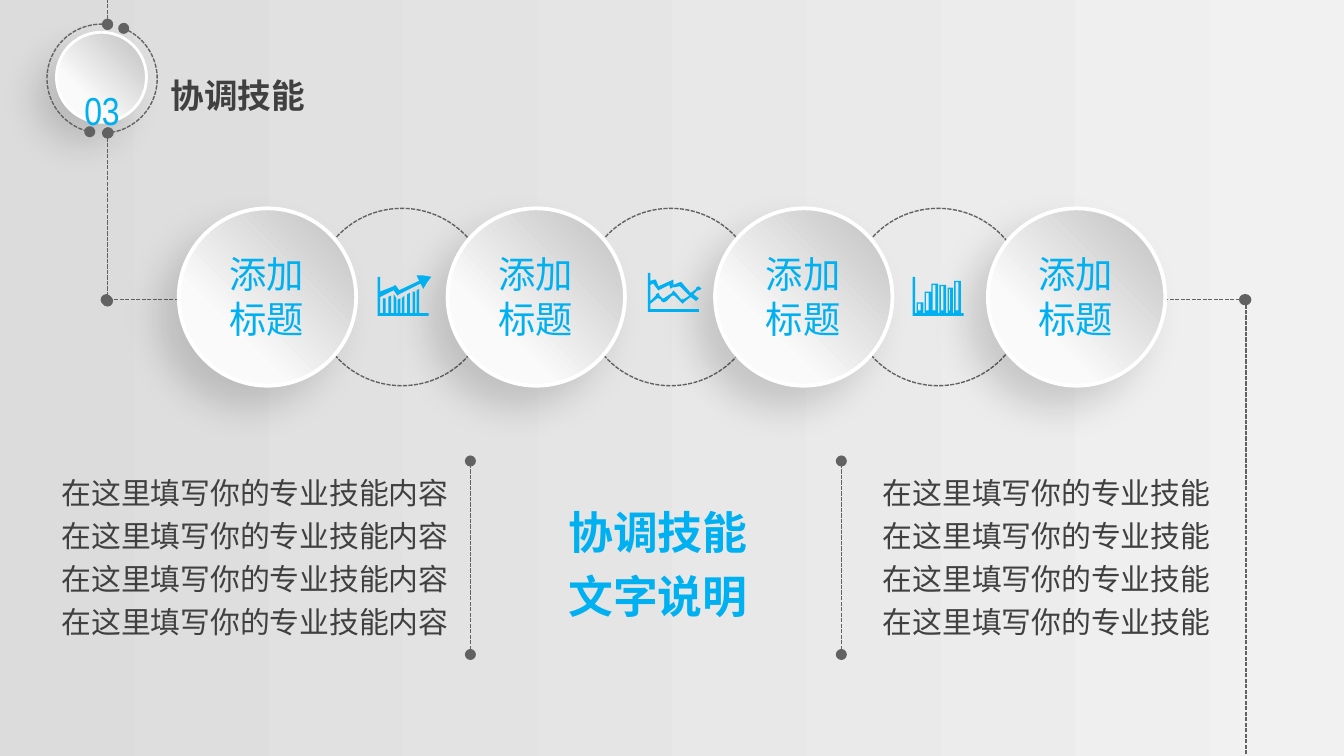
from pptx import Presentation
from pptx.dml.color import RGBColor
from pptx.enum.dml import MSO_LINE
from pptx.enum.shapes import MSO_CONNECTOR, MSO_SHAPE
from pptx.enum.text import MSO_ANCHOR, MSO_AUTO_SIZE, PP_ALIGN
from pptx.oxml import parse_xml
from pptx.oxml.ns import nsdecls, qn
from pptx.util import Inches, Pt
from lxml.etree import SubElement

BLUE, GREY, DARK, WHITE = "00B0F0", "626262", "404040", "FFFFFF"
SC, JP = "Noto Sans CJK SC", "Noto Sans CJK JP"

# Icon outlines, in hundredths of an inch from the icon's corner
GROWTH_GAPS = [(4, 17, 6, 17), (8, 16, 10, 15), (15, 18, 17, 17), (18, 17, 20, 15),
               (22, 14, 24, 13), (26, 12, 28, 12), (29, 11, 31, 10)]
GROWTH_ARROW = [(38, 28), (38, 30), (0, 30), (0, 1), (2, 1), (2, 12), (12, 8), (13, 7),
                (14, 8), (16, 11), (31, 4), (29, 0), (34, 0), (40, 1), (37, 5), (34, 10),
                (32, 6), (16, 14), (15, 15), (14, 14), (12, 11), (2, 16)]
TREND_OUTER = [(2, 27), (38, 27), (38, 29), (0, 29), (0, 0), (2, 0), (2, 6), (5, 5),
               (6, 5), (8, 10), (17, 6), (19, 5), (19, 9), (24, 7), (25, 7), (32, 15),
               (36, 12), (36, 11), (38, 10), (40, 12), (38, 13), (37, 13), (34, 16),
               (38, 19), (36, 21), (32, 18), (28, 21), (26, 23), (24, 21), (20, 17),
               (18, 17), (14, 21), (12, 22), (10, 21), (10, 20), (8, 19), (7, 19), (2, 23)]
TREND_INNER = [(26, 19), (26, 20), (31, 17), (24, 10), (18, 11), (17, 12), (16, 9),
               (8, 13), (7, 12), (4, 8), (2, 9), (2, 21), (6, 17), (6, 16), (8, 15),
               (9, 17), (11, 19), (12, 19), (18, 15), (19, 13), (21, 15), (25, 20)]
BARS = [(3, 8, 19), (9, 14, 11), (14, 19, 5), (20, 25, 6), (26, 30, 8), (31, 36, 3)]


def rgb(value):
    return RGBColor.from_string(value)


def set_gradient(fill, angle, *stops):
    fill.gradient()
    fill.gradient_angle = angle
    for stop, (position, color) in zip(fill.gradient_stops, stops):
        stop.position = position
        stop.color.rgb = rgb(color)


def dash(line):
    """Give a line the thin dashed style with a dot at each end."""
    line.color.rgb = rgb(GREY)
    line.width = Pt(0.75)
    line.dash_style = MSO_LINE.SQUARE_DOT
    for end in ("headEnd", "tailEnd"):
        SubElement(line._get_or_add_ln(), qn(f"a:{end}"), type="oval")


def add_dotted_line(shapes, x1, y1, x2, y2):
    connector = shapes.add_connector(MSO_CONNECTOR.STRAIGHT, *map(Inches, (x1, y1, x2, y2)))
    dash(connector.line)
    SubElement(connector._element.spPr, qn("a:effectLst"))


def add_dashed_shape(shapes, kind, x, y, size):
    outline = shapes.add_shape(kind, *map(Inches, (x, y, size, size)))
    outline.shadow.inherit = False
    outline.fill.background()
    dash(outline.line)
    return outline


def add_disc(shapes, x, y, size, border):
    """Add a shaded white-rimmed circle with a soft shadow."""
    disc = shapes.add_shape(MSO_SHAPE.OVAL, *map(Inches, (x, y, size, size)))
    set_gradient(disc.fill, 225, (0, "BFBFBF"), (0.7, "FAFAFA"))
    disc.line.color.rgb = rgb(WHITE)
    disc.line.width = Pt(border)
    disc._element.spPr.append(parse_xml(
        f'<a:effectLst {nsdecls("a")}><a:outerShdw blurRad="{Pt(20)}" dist="{Pt(15)}" '
        'dir="8100000" algn="tr" rotWithShape="0"><a:srgbClr val="000000">'
        '<a:alpha val="15000"/></a:srgbClr></a:outerShdw></a:effectLst>'))


def write(frame, lines, font, size, color, bold=False, wrap=True,
          anchor=MSO_ANCHOR.TOP, align=PP_ALIGN.LEFT, spacing=1.0):
    frame_format = {"word_wrap": wrap, "vertical_anchor": anchor,
                    "auto_size": MSO_AUTO_SIZE.SHAPE_TO_FIT_TEXT}
    for key, value in frame_format.items():
        setattr(frame, key, value)
    for i, line in enumerate(lines):
        paragraph = frame.add_paragraph() if i else frame.paragraphs[0]
        paragraph.alignment = align
        paragraph.line_spacing = spacing
        run = paragraph.add_run()
        run.text = line
        for key, value in {"name": font, "size": Pt(size), "bold": bold}.items():
            setattr(run.font, key, value)
        run.font.color.rgb = rgb(color)
        SubElement(run._r.get_or_add_rPr(), qn("a:ea"), typeface=font)


def add_text(shapes, box, lines, *args, **kwargs):
    frame = shapes.add_textbox(*map(Inches, box)).text_frame
    write(frame, lines, *args, **kwargs)
    return frame


def add_icon(shapes, x, y, contours):
    first, *holes = contours
    builder = shapes.build_freeform(*first[0], scale=Inches(0.01))
    builder.add_line_segments(first[1:])
    for hole in holes:
        builder.move_to(*hole[0])
        builder.add_line_segments(hole[1:])
    icon = builder.convert_to_shape(Inches(x), Inches(y))
    icon.shadow.inherit = False
    icon.fill.solid()
    icon.fill.fore_color.rgb = rgb(BLUE)
    icon.line.fill.background()


def growth_contours():
    teeth = [p for l, tl, r, tr in GROWTH_GAPS for p in ((l, 28), (l, tl), (r, tr), (r, 28))]
    valley = [(12, 28), (12, 14), (14, 17), (14, 28)]
    return [[(2, 28)] + teeth[:8] + valley + teeth[8:] + GROWTH_ARROW]


def bar_contours():
    bars = [p for l, r, top in BARS for p in ((l, 27), (l, top), (r, top), (r, 27))]
    axes = [(38, 27), (38, 29), (0, 29), (0, 0), (2, 0)]
    slots = [[(l + 1, top + 1), (l + 1, 25), (r - 2, 25), (r - 2, top + 1)]
             for l, r, top in BARS]
    return [[(2, 27)] + bars + axes, *slots]


def add_badge(shapes, x, y, number):
    """Add the section number on a disc between two dotted arcs."""
    badge = shapes.add_group_shape().shapes
    add_disc(badge, x + 0.07, y + 0.06, 0.67, 1.5)
    for dx, flipped, angles in ((0, True, (158.1, 46.57)), (0.01, False, (175.58, 50.57))):
        arc = add_dashed_shape(badge, MSO_SHAPE.ARC, x + dx, y, 0.81)
        for i, angle in enumerate(angles):
            arc.adjustments[i] = angle
        if flipped:
            arc._element.spPr.xfrm.set("flipH", "1")
    frame = add_text(badge, (x + 0.13, y + 0.11, 0.56, 0.71), [number], "Arial Narrow", 36,
                     BLUE, wrap=False, anchor=MSO_ANCHOR.MIDDLE, align=PP_ALIGN.CENTER,
                     spacing=1.5)
    frame.paragraphs[0].runs[0]._r.get_or_add_rPr().set("baseline", "12000")


def add_chain(shapes, lefts, y, size):
    """Add the row of labelled discs, linked by rings that hold icons."""
    for x in lefts[:-1]:
        add_dashed_shape(shapes, MSO_SHAPE.OVAL, x + 1, y, size)
    for x in lefts:
        add_disc(shapes, x, y, size, 2)
    for x in lefts:
        add_text(shapes, (x + 0.15, y + 0.27, 1.01, 0.77), ["添加", "标题"], JP, 20, BLUE,
                 anchor=MSO_ANCHOR.MIDDLE, align=PP_ALIGN.CENTER)
    icons = [(1.48, 0.5, growth_contours()), (1.49, 0.48, [TREND_OUTER, TREND_INNER]),
             (1.47, 0.51, bar_contours())]
    for x, (dx, dy, contours) in zip(lefts, icons):
        add_icon(shapes, x + dx, y + dy, contours)


def add_descriptions(shapes, y):
    for x in (3.5, 6.26):
        add_dotted_line(shapes, x, y + 1.44, x, y)
    for x, line in ((0.36, "在这里填写你的专业技能内容"), (6.47, "在这里填写你的专业技能")):
        add_text(shapes, (x, y, 3.81, 1.72), [line] * 4, SC, 16, DARK, spacing=1.2)
    add_text(shapes, (4.13, y + 0.19, 1.55, 1.07), ["协调技能", "文字说明"], SC, 24, BLUE,
             bold=True, wrap=False, anchor=MSO_ANCHOR.MIDDLE, spacing=1.2)


def place_title(title, box, text):
    for key, value in zip(("left", "top", "width", "height"), box):
        setattr(title, key, Inches(value))
    write(title.text_frame, [text], SC, 18, DARK, bold=True, wrap=False)


def main():
    deck = Presentation()
    deck.slide_width = Inches(10)
    deck.slide_height = deck.slide_width * 9 // 16
    slide = deck.slides.add_slide(deck.slide_layouts[5])
    set_gradient(slide.background.fill, 0, (0, "DCDCDC"), (1, "F1F1F1"))
    shapes = slide.shapes
    place_title(shapes.title, (1.17, 0.51, 1.21, 0.4), "协调技能")
    for ends in ((1.98, 2.23, 0.79, 2.23), (9.26, 2.23, 8.07, 2.23), (9.27, 5.73, 9.27, 2.23),
                 (0.8, 0.99, 0.8, 2.24), (0.8, -0.21, 0.8, 0.18)):
        add_dotted_line(shapes, *ends)
    add_chain(shapes, (1.33, 3.33, 5.32, 7.35), 1.55, 1.32)
    add_badge(shapes, 0.35, 0.18, "03")
    add_descriptions(shapes, 3.43)
    deck.save("out.pptx")


if __name__ == "__main__":
    main()
